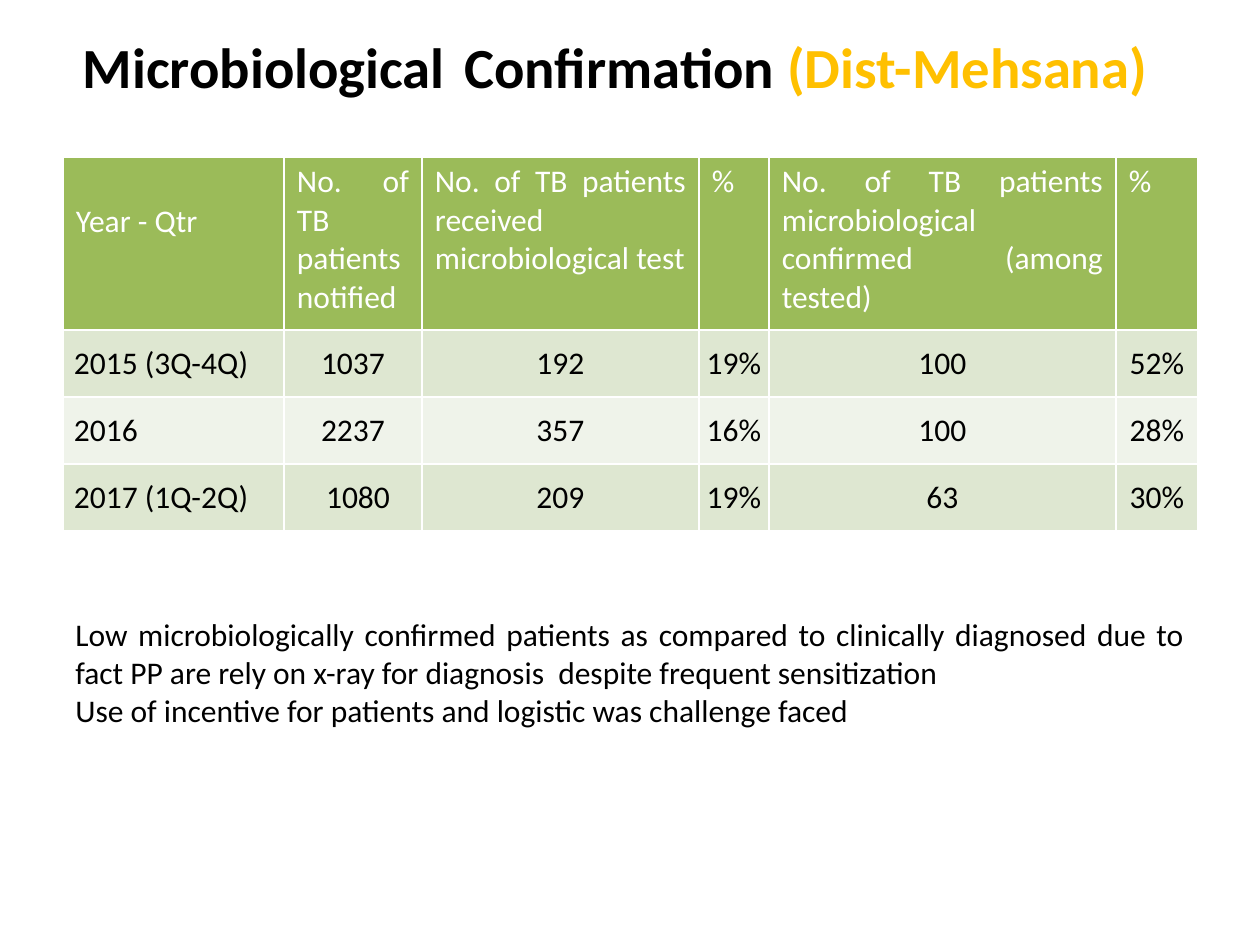
from dataclasses import dataclass
from typing import Optional

from lxml.etree import SubElement
from pptx import Presentation
from pptx.dml.color import RGBColor
from pptx.enum.text import MSO_ANCHOR as Anchor, PP_ALIGN as Align
from pptx.oxml.ns import qn
from pptx.util import Emu, Pt

EMU_PER_PX = 914400 / 126
FONT = "Calibri"
BODY_SIZE = 18
COLORS = {
    "black": "000000",
    "white": "FFFFFF",
    "amber": "FFC000",
    "header": "9BBB59",
    "band_dark": "DEE7D1",
    "band_light": "EFF3EA",
}


@dataclass(frozen=True)
class Span:
    text: str
    size: float = BODY_SIZE
    color: str = "black"
    bold: bool = False


@dataclass(frozen=True)
class Box:
    left: int
    top: int
    width: int
    height: int


@dataclass(frozen=True)
class CellStyle:
    fill: str
    color: str
    align: Optional[Align]
    anchor: Anchor
    insets: tuple[int, int, int, int]


@dataclass(frozen=True)
class Column:
    heading: str
    width: int
    values: tuple[str, str, str]


COLUMNS = (
    Column("Year - Qtr", 221, ("2015 (3Q-4Q)", "2016", "2017 (1Q-2Q)")),
    Column("No. of TB patients notified", 138, ("1037", "2237", "1080")),
    Column("No. of TB patients received microbiological test", 277, ("192", "357", "209")),
    Column("%", 70, ("19%", "16%", "19%")),
    Column("No. of TB patients microbiological confirmed (among tested)", 347, ("100", "100", "63")),
    Column("%", 82, ("52%", "28%", "30%")),
)
HEADER_HEIGHT, ROW_HEIGHT = 173, 67
TITLE = (
    Span("Microbiological", 32.4, bold=True),
    Span(" ", 48.6, bold=True),
    Span("Confirmation ", 32.4, bold=True),
    Span("(Dist-Mehsana)", 32.4, "amber", True),
)
REMARKS = (
    "Low microbiologically confirmed patients as compared to clinically diagnosed due to "
    "fact PP are rely on x-ray for diagnosis  despite frequent sensitization",
    "Use of incentive for patients and logistic was challenge faced",
)


def px(length: int) -> Emu:
    return Emu(round(length * EMU_PER_PX))


def rgb(name: str) -> RGBColor:
    return RGBColor.from_string(COLORS[name])


def write_para(para, spans: tuple[Span, ...], align: Optional[Align]) -> None:
    para.alignment = align
    for span in spans:
        run = para.add_run()
        run.text = span.text
        run.font.name = FONT
        run.font.size = Pt(span.size)
        run.font.bold = span.bold
        run.font.color.rgb = rgb(span.color)


def draw_text(page, box: Box, paras: list[tuple[Span, ...]], align: Align, anchor: Anchor) -> None:
    frame = page.shapes.add_textbox(px(box.left), px(box.top), px(box.width), px(box.height)).text_frame
    frame.word_wrap = True
    frame.vertical_anchor = anchor
    for index, spans in enumerate(paras):
        para = frame.add_paragraph() if index else frame.paragraphs[0]
        write_para(para, spans, align)


def draw_borders(cell) -> None:
    properties = cell._tc.get_or_add_tcPr()
    for index, side in enumerate(("lnL", "lnR", "lnT", "lnB")):
        line = properties.makeelement(qn(f"a:{side}"), {"w": str(Pt(1))})
        fill = SubElement(line, qn("a:solidFill"))
        SubElement(fill, qn("a:srgbClr"), val=COLORS["white"])
        properties.insert(index, line)


def fill_cell(cell, text: str, style: CellStyle) -> None:
    cell.margin_left, cell.margin_top, cell.margin_right, cell.margin_bottom = map(px, style.insets)
    cell.vertical_anchor = style.anchor
    cell.fill.solid()
    cell.fill.fore_color.rgb = rgb(style.fill)
    draw_borders(cell)
    write_para(cell.text_frame.paragraphs[0], (Span(text, color=style.color),), style.align)


def header_style(column: int) -> CellStyle:
    top = 6 if column else 45
    return CellStyle("header", "white", Align.JUSTIFY, Anchor.TOP, (13, top, 13, 6))


def value_style(row: int, column: int) -> CellStyle:
    fill = "band_dark" if row % 2 else "band_light"
    indented = column == 0 or (row, column) == (3, 1)
    align = Align.CENTER if column else Align.LEFT
    return CellStyle(fill, "black", align, Anchor.MIDDLE, (11 if indented else 1, 1, 1, 0))


def draw_table(page, left: int, top: int) -> None:
    rows = len(COLUMNS[0].values) + 1
    width = sum(column.width for column in COLUMNS)
    height = HEADER_HEIGHT + ROW_HEIGHT * (rows - 1)
    table = page.shapes.add_table(rows, len(COLUMNS), px(left), px(top), px(width), px(height)).table
    for row in range(rows):
        table.rows[row].height = px(ROW_HEIGHT if row else HEADER_HEIGHT)
    for index, column in enumerate(COLUMNS):
        table.columns[index].width = px(column.width)
        fill_cell(table.cell(0, index), column.heading, header_style(index))
        for row, value in enumerate(column.values, start=1):
            fill_cell(table.cell(row, index), value, value_style(row, index))


def main() -> None:
    """Build the microbiological confirmation slide and save it."""
    deck = Presentation()
    deck.slide_width, deck.slide_height = px(1260), px(945)
    page = deck.slides.add_slide(deck.slide_layouts[6])
    draw_text(page, Box(32, 13, 1166, 82), [TITLE], Align.CENTER, Anchor.MIDDLE)
    draw_table(page, 63, 157)
    remarks = [(Span(text),) for text in REMARKS]
    draw_text(page, Box(63, 609, 1134, 127), remarks, Align.JUSTIFY, Anchor.TOP)
    deck.save("out.pptx")


if __name__ == "__main__":
    main()
